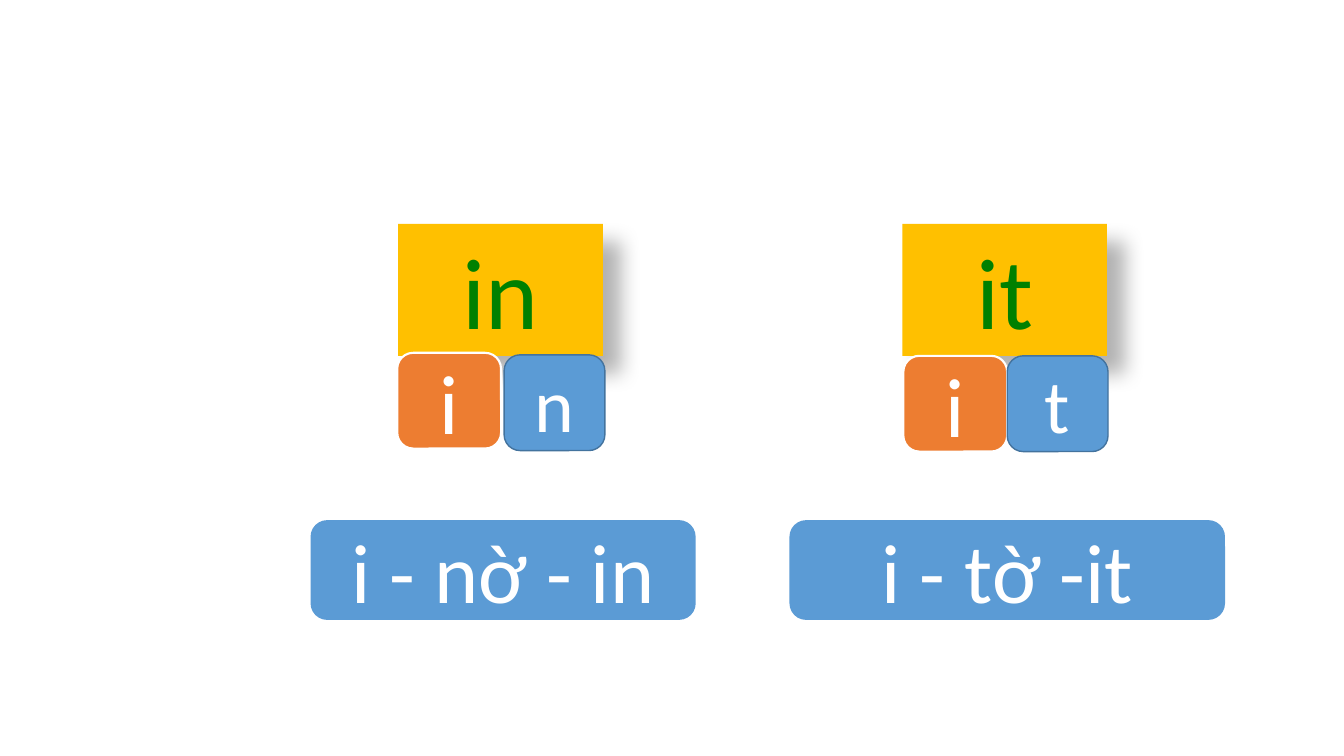
from lxml import etree
from pptx import Presentation
from pptx import util as u
from pptx.dml.color import RGBColor
from pptx.enum import shapes, text
from pptx.oxml import ns

GOLD = RGBColor(0xFF, 0xC0, 0x00)
GREEN = RGBColor(0x00, 0x80, 0x00)
ORANGE = RGBColor(0xED, 0x7D, 0x31)
BLUE = RGBColor(0x5B, 0x9B, 0xD5)
DARK_BLUE = RGBColor(0x43, 0x73, 0x9E)
WHITE = RGBColor(0xFF, 0xFF, 0xFF)
BLACK = RGBColor(0x00, 0x00, 0x00)

RECTANGLE = shapes.MSO_SHAPE.RECTANGLE
ROUNDED = shapes.MSO_SHAPE.ROUNDED_RECTANGLE


def add_card(kind, box, fill, wording, size, color=WHITE, line=None, width=1):
    shape = slide.shapes.add_shape(kind, *[u.Inches(value) for value in box])
    shape.shadow.inherit = False
    shape.fill.solid()
    shape.fill.fore_color.rgb = fill
    if line is None:
        shape.line.fill.background()
    else:
        shape.line.color.rgb = line
        shape.line.width = u.Pt(width)
    frame = shape.text_frame
    frame.text = wording
    frame.word_wrap = True
    frame.vertical_anchor = text.MSO_ANCHOR.MIDDLE
    paragraph = frame.paragraphs[0]
    paragraph.alignment = text.PP_ALIGN.CENTER
    font = paragraph.runs[0].font
    font.name = "Calibri"
    font.size = u.Pt(size)
    font.color.rgb = color
    return shape


def add_soft_shadow(shape):
    effects = shape._element.spPr.find(ns.qn("a:effectLst"))
    shadow = etree.SubElement(
        effects, ns.qn("a:outerShdw"), blurRad=str(u.Pt(15)), dist=str(u.Pt(18)),
        dir="2700000", algn="tl", rotWithShape="0")
    color = etree.SubElement(shadow, ns.qn("a:srgbClr"), val=str(BLACK))
    etree.SubElement(color, ns.qn("a:alpha"), val="30000")


presentation = Presentation()
presentation.slide_width = u.Inches(13.33)
presentation.slide_height = u.Inches(7.5)
slide = presentation.slides.add_slide(presentation.slide_layouts[6])

rhymes = [
    ("in", 3.95, "i", (3.94, 3.5), "n", (5, 3.52)),
    ("it", 8.95, "i", (8.96, 3.53), "t", (9.99, 3.53)),
]
for rhyme, left, vowel, vowel_corner, ending, ending_corner in rhymes:
    card = add_card(RECTANGLE, (left, 2.22, 2.03, 1.31), GOLD, rhyme, 72, GREEN)
    card.text_frame.vertical_anchor = text.MSO_ANCHOR.TOP
    card.text_frame.auto_size = text.MSO_AUTO_SIZE.SHAPE_TO_FIT_TEXT
    add_soft_shadow(card)
    add_card(ROUNDED, (*vowel_corner, 1.03, 0.95), ORANGE, vowel, 60, line=WHITE, width=1.5)
    add_card(ROUNDED, (*ending_corner, 1, 0.95), BLUE, ending, 54, line=DARK_BLUE)

for spelling, left, width in [("i - nờ - in", 3.08, 3.82), ("i - tờ -it", 7.83, 4.32)]:
    add_card(ROUNDED, (left, 5.16, width, 0.99), BLUE, spelling, 60)

presentation.save("out.pptx")
